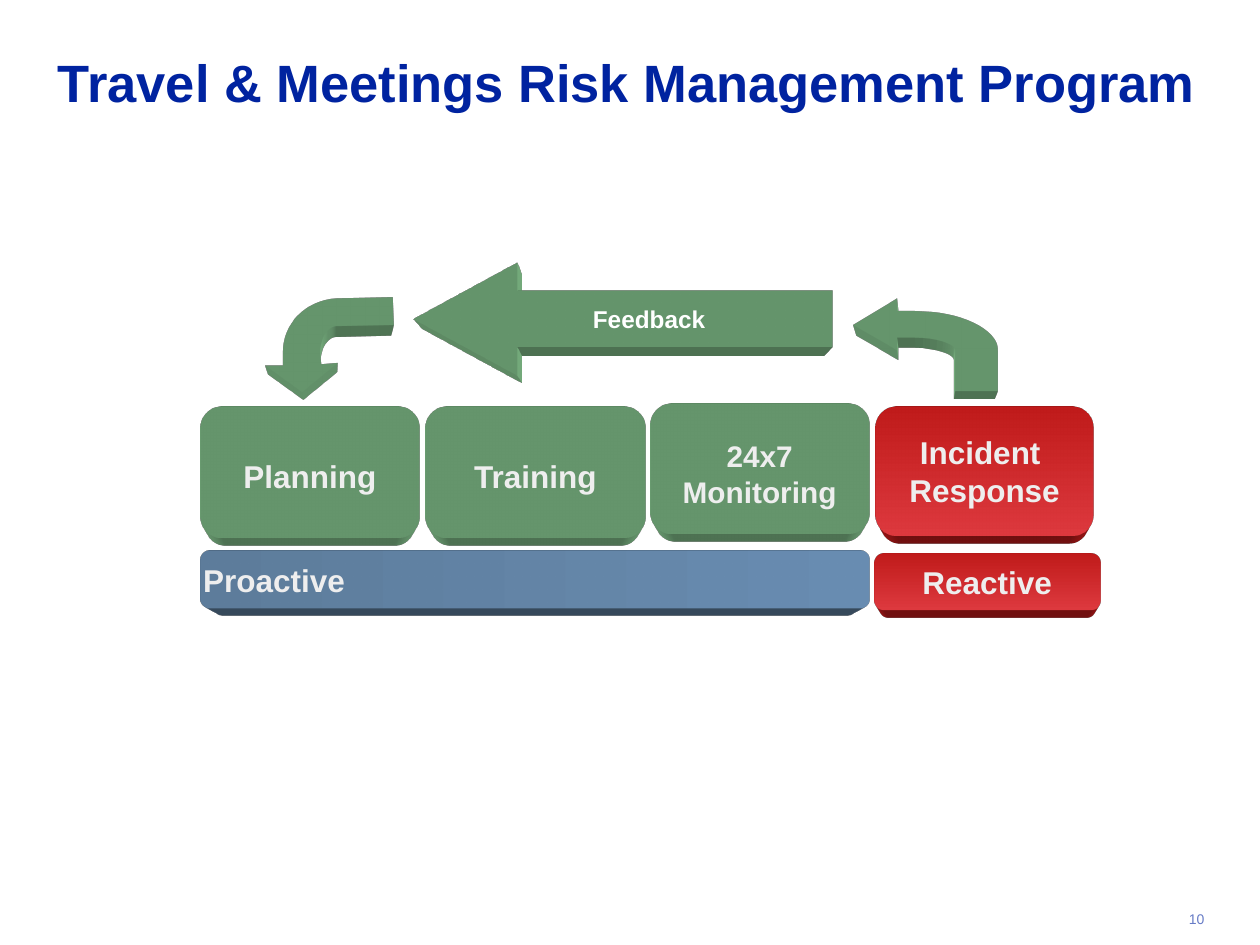
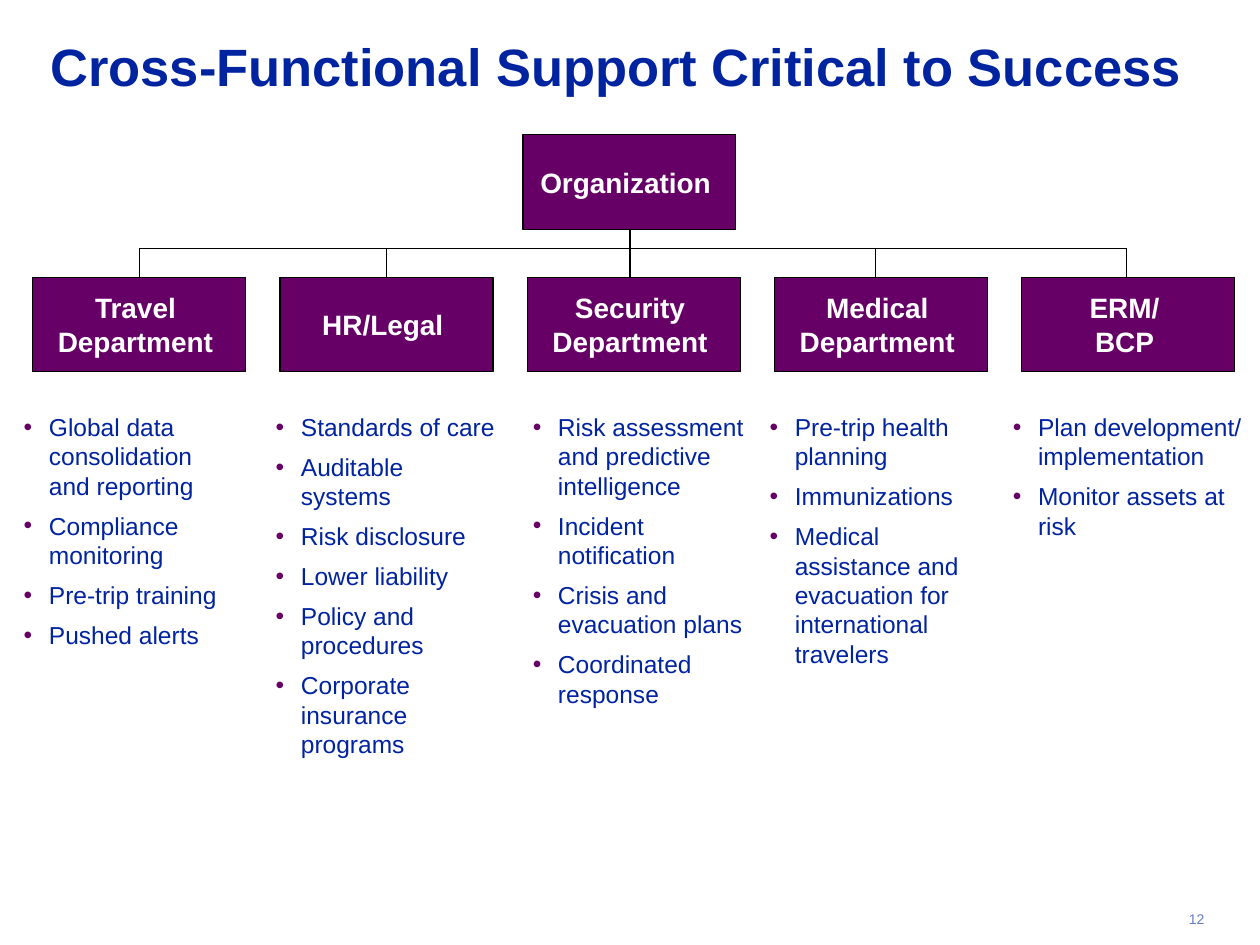
from lxml import etree
from pptx import Presentation
from pptx.dml.color import RGBColor
from pptx.enum.shapes import MSO_CONNECTOR, MSO_SHAPE
from pptx.enum.text import MSO_ANCHOR, MSO_AUTO_SIZE, PP_ALIGN
from pptx.oxml.ns import qn
from pptx.util import Inches, Pt

TOP, MIDDLE, BOTTOM = MSO_ANCHOR.TOP, MSO_ANCHOR.MIDDLE, MSO_ANCHOR.BOTTOM
LEFT, CENTER, RIGHT = PP_ALIGN.LEFT, PP_ALIGN.CENTER, PP_ALIGN.RIGHT
NO_FIT = MSO_AUTO_SIZE.NONE
RECTANGLE, ROUNDED = MSO_SHAPE.RECTANGLE, MSO_SHAPE.ROUNDED_RECTANGLE
LEFT_ARROW, STRAIGHT = MSO_SHAPE.LEFT_ARROW, MSO_CONNECTOR.STRAIGHT

# Shared colours and font
NAVY = RGBColor(0x00, 0x23, 0xA0)
PAGE_BLUE = RGBColor(0x66, 0x7B, 0xC6)
PURPLE = RGBColor(0x66, 0x00, 0x66)
BLACK = RGBColor(0x00, 0x00, 0x00)
WHITE = RGBColor(0xFF, 0xFF, 0xFF)
PALE = RGBColor(0xEE, 0xEE, 0xEE)
GREEN = RGBColor(0x84, 0xC2, 0x8D)
RED_TOP = RGBColor(0xC0, 0x1B, 0x1B)
RED_LOW = RGBColor(0xDD, 0x39, 0x3E)
STEEL = RGBColor(0x5E, 0x7D, 0x9C)
STEEL_LIGHT = RGBColor(0x69, 0x8D, 0xB2)
FONT = "Arial"
EXTRUSION = Pt(34)

# Curved arrows: points, and six-number Bezier curves
RETURN_ARROW = [
    (6.77, 2.58), (7.12, 2.37), (7.12, 2.47), (7.26, 2.47),
    (7.62, 2.47, 7.92, 2.61, 7.92, 2.78), (7.92, 3.1), (7.58, 3.1), (7.58, 2.78),
    (7.58, 2.73, 7.43, 2.68, 7.26, 2.68), (7.12, 2.68), (7.12, 2.78)]
PLANNING_ARROW = [
    (2.4, 3.11), (2.11, 2.9), (2.25, 2.9), (2.25, 2.81),
    (2.24, 2.57, 2.43, 2.38, 2.67, 2.37), (3.11, 2.36), (3.12, 2.58), (2.67, 2.59),
    (2.6, 2.59, 2.54, 2.69, 2.54, 2.8), (2.55, 2.89), (2.68, 2.88)]

# Support chart: grid and content
COLUMN_LEFT, COLUMN_STEP = 0.26, (8.11 - 0.26) / 4
BOX_WIDTH, BOX_HEIGHT = 1.69, 0.75
ORGANIZATION_TOP, BUS_TOP, DEPARTMENT_TOP, LIST_TOP = 1.07, 1.97, 2.2, 3.22
# name lines, drop line x, list left, list width, list items
DEPARTMENTS = [
    (["Travel", "Department"], 1.11, 0.09, 1.86,
     ["Global data consolidation and reporting", "Compliance monitoring",
      "Pre-trip training", "Pushed alerts"]),
    (["HR/Legal"], 3.07, 2.09, 1.94,
     ["Standards of care", "Auditable systems", "Risk disclosure",
      "Lower liability", "Policy and procedures",
      "Corporate insurance programs"]),
    (["Security", "Department"], 5, 4.13, 1.88,
     ["Risk assessment and predictive intelligence", "Incident notification",
      "Crisis and evacuation plans", "Coordinated response"]),
    (["Medical", "Department"], 6.95, 6.01, 2.02,
     ["Pre-trip health planning", "Immunizations",
      "Medical assistance and evacuation for international travelers"]),
    (["ERM/", "BCP"], 8.94, 7.94, 2.06,
     ["Plan development/ implementation", "Monitor assets at risk"]),
]


def set_values(target, values):
    for name, value in values.items():
        setattr(target, name, value)


def set_text(shape, lines, size, color, bold=False, align=CENTER, anchor=MIDDLE,
             insets=(0, 0, 0, 0), wrap=True, spacing=None):
    frame = shape.text_frame
    left, top, right, bottom = (Inches(inset) for inset in insets)
    set_values(frame, {
        "auto_size": NO_FIT, "word_wrap": wrap, "vertical_anchor": anchor,
        "margin_left": left, "margin_top": top,
        "margin_right": right, "margin_bottom": bottom})
    for index, line in enumerate(lines):
        para = frame.add_paragraph() if index else frame.paragraphs[0]
        set_values(para, {"alignment": align, "line_spacing": spacing})
        span = para.add_run()
        span.text = line
        set_values(span.font, {"name": FONT, "size": Pt(size), "bold": bold})
        span.font.color.rgb = color
    return frame


def paint(shape, colors, angle=0):
    """Fill with one colour, or with a two-colour gradient."""
    shape.shadow.inherit = False
    shape.line.fill.background()
    if len(colors) == 1:
        shape.fill.solid()
        shape.fill.fore_color.rgb = colors[0]
        return
    shape.fill.gradient()
    shape.fill.gradient_angle = angle
    for stop, color, position in zip(shape.fill.gradient_stops, colors, (0, 1)):
        stop.color.rgb = color
        stop.position = position


def extrude(shape, color):
    """Give the shape a solid depth seen from below."""
    properties = shape._element.spPr
    scene = etree.SubElement(properties, qn("a:scene3d"))
    etree.SubElement(scene, qn("a:camera"), prst="legacyPerspectiveBottom")
    etree.SubElement(scene, qn("a:lightRig"), rig="legacyFlat3", dir="t")
    solid = etree.SubElement(properties, qn("a:sp3d"), extrusionH=str(EXTRUSION),
                             prstMaterial="legacyMatte")
    for bevel in ("a:bevelT", "a:bevelB"):
        etree.SubElement(solid, qn(bevel), w="13500", h="13500", prst="angle")
    depth = etree.SubElement(solid, qn("a:extrusionClr"))
    etree.SubElement(depth, qn("a:srgbClr"), val=str(color))


def add_preset(page, kind, left, top, width, height):
    return page.shapes.add_shape(kind, Inches(left), Inches(top),
                                 Inches(width), Inches(height))


def add_text_box(page, left, top, width, height):
    return page.shapes.add_textbox(Inches(left), Inches(top),
                                   Inches(width), Inches(height))


def add_curved_arrow(page, outline):
    points = [(Inches(part[i]), Inches(part[i + 1]))
              for part in outline for i in range(0, len(part), 2)]
    builder = page.shapes.build_freeform(*points[0])
    builder.add_line_segments(points[1:], close=True)
    arrow = builder.convert_to_shape()
    # Join each three segments of a curve into one Bezier segment
    segments = iter(list(arrow._element.iter(qn("a:lnTo"))))
    for part in outline[1:]:
        first = next(segments)
        if len(part) == 6:
            first.tag = qn("a:cubicBezTo")
            for _ in range(2):
                segment = next(segments)
                first.append(segment[0])
                segment.getparent().remove(segment)
    paint(arrow, [GREEN])
    extrude(arrow, GREEN)


def add_block(page, left, top, width, height, colors, lines, size=18, angle=270, **text):
    block = add_preset(page, ROUNDED, left, top, width, height)
    block.adjustments[0] = 0.167
    paint(block, colors, angle)
    extrude(block, colors[0])
    set_text(block, lines, size, PALE, bold=True, **text)


def add_line(page, x1, y1, x2, y2):
    line = page.shapes.add_connector(STRAIGHT, Inches(x1), Inches(y1),
                                     Inches(x2), Inches(y2))
    line.line.color.rgb = BLACK
    line.line.width = Pt(0.75)
    etree.SubElement(line._element.spPr, qn("a:effectLst"))


def add_chart_box(page, left, top, lines):
    box = add_preset(page, RECTANGLE, left, top, BOX_WIDTH, BOX_HEIGHT)
    paint(box, [PURPLE])
    box.line.color.rgb = BLACK
    box.line.width = Pt(0.75)
    set_text(box, lines, 16, WHITE, bold=True, insets=(0, 0, 0.06, 0))


def add_bullet_list(page, left, width, items):
    box = add_text_box(page, left, LIST_TOP, width, 2.84)
    frame = set_text(box, items, 14, NAVY, align=LEFT, anchor=TOP,
                     insets=(0.1, 0.05, 0.1, 0.05))
    for para in frame.paragraphs:
        para.space_after = Pt(6)
        properties = para._p.get_or_add_pPr()
        properties.set("marL", str(Inches(0.2)))
        properties.set("indent", str(-Inches(0.2)))
        color = etree.SubElement(properties, qn("a:buClr"))
        etree.SubElement(color, qn("a:srgbClr"), val=str(PURPLE))
        etree.SubElement(properties, qn("a:buFont"), typeface=FONT)
        etree.SubElement(properties, qn("a:buChar"), char="•")


def add_page(deck, title, left, top, width, number):
    """Title-only page with the shared title style and page number."""
    page = deck.slides.add_slide(deck.slide_layouts[5])
    heading = page.shapes.title
    set_values(heading, {"left": Inches(left), "top": Inches(top),
                         "width": Inches(width), "height": Inches(1.25)})
    set_text(heading, [title], 30, NAVY, bold=True, align=LEFT, anchor=TOP, spacing=0.9)
    footer = add_text_box(page, 9.4, 7.22, 0.18, 0.16)
    set_text(footer, [number], 8, PAGE_BLUE, align=RIGHT, anchor=BOTTOM,
             insets=(0.02,) * 4, wrap=False, spacing=0.9)
    return page


def add_feedback_arrow(page):
    arrow = add_preset(page, LEFT_ARROW, 3.28, 2.08, 3.33, 0.89)
    arrow.adjustments[0], arrow.adjustments[1] = 0.5, 0.93
    paint(arrow, [GREEN])
    extrude(arrow, GREEN)
    frame = set_text(arrow, ["Feedback"], 24, WHITE, bold=True, wrap=False,
                     insets=(0.1, 0, 0.1, 0.2), spacing=0.7)
    frame.paragraphs[0].runs[0]._r.get_or_add_rPr().set("baseline", "-25000")


def build_program_page(deck):
    page = add_page(deck, "Travel & Meetings Risk Management Program",
                    0.46, 0.45, 9.25, "10")
    reds = [RED_TOP, RED_LOW]
    add_curved_arrow(page, RETURN_ARROW)
    # Phase bars
    add_block(page, 1.59, 4.37, 5.31, 0.45, [STEEL, STEEL_LIGHT], ["Proactive"],
              angle=0, align=LEFT, insets=(0, 0.02, 0.2, 0))
    add_block(page, 6.94, 4.39, 1.79, 0.45, reds, ["Reactive"])
    # Step cards
    steps = [(1.59, 3.23, ["Planning"], 18, 0.06), (3.38, 3.23, ["Training"], 18, 0.06),
             (5.16, 3.2, ["24x7", "Monitoring"], 17, 0.08)]
    for left, top, lines, size, drop in steps:
        add_block(page, left, top, 1.74, 1.04, [GREEN], lines, size,
                  insets=(0, drop, 0, 0))
    add_block(page, 6.95, 3.23, 1.73, 1.02, reds, ["Incident ", "Response"])
    add_feedback_arrow(page)
    add_curved_arrow(page, PLANNING_ARROW)


def build_support_page(deck):
    page = add_page(deck, "Cross-Functional Support Critical to Success",
                    0.4, 0.33, 9.5, "12")
    # Department tasks
    for _, _, left, width, items in DEPARTMENTS:
        add_bullet_list(page, left, width, items)
    # Connecting lines; the middle one starts at the organization box
    middle = DEPARTMENTS[len(DEPARTMENTS) // 2]
    for department in DEPARTMENTS:
        drop = department[1]
        start = ORGANIZATION_TOP + BOX_HEIGHT if department is middle else BUS_TOP
        add_line(page, drop, start, drop, DEPARTMENT_TOP)
    add_line(page, DEPARTMENTS[0][1], BUS_TOP, DEPARTMENTS[-1][1], BUS_TOP)
    # Organization and departments
    add_chart_box(page, 4.15, ORGANIZATION_TOP, ["Organization"])
    for column, department in enumerate(DEPARTMENTS):
        add_chart_box(page, COLUMN_LEFT + column * COLUMN_STEP, DEPARTMENT_TOP,
                      department[0])


def main():
    deck = Presentation()
    deck.slide_width, deck.slide_height = Inches(10), Inches(7.5)
    build_program_page(deck)
    build_support_page(deck)
    deck.save("out.pptx")


if __name__ == "__main__":
    main()
